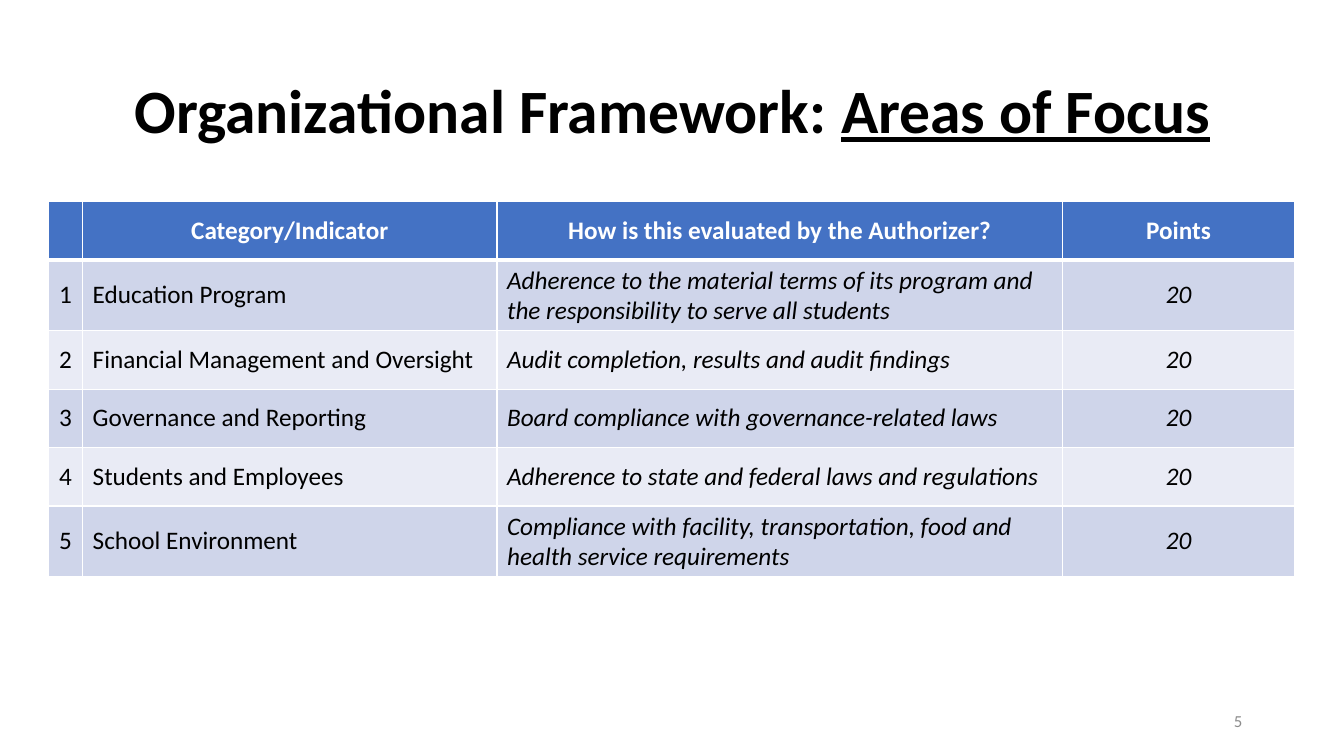
from lxml import etree
from pptx import Presentation
from pptx import util as u
from pptx.dml.color import RGBColor
from pptx.enum import text
from pptx.oxml.ns import qn

PX = 9144  # EMU per px, 100 px to the inch
BLACK = RGBColor(0x00, 0x00, 0x00)
WHITE = RGBColor(0xFF, 0xFF, 0xFF)
GREY = RGBColor(0x8C, 0x8C, 0x8C)
HEADER_BLUE = RGBColor(0x44, 0x72, 0xC4)
BANDS = RGBColor(0xCF, 0xD5, 0xEA), RGBColor(0xE9, 0xEB, 0xF5)
LEFT, CENTER, RIGHT = (text.PP_ALIGN.LEFT, text.PP_ALIGN.CENTER,
                       text.PP_ALIGN.RIGHT)

COLUMN_WIDTHS = 34, 411, 561, 230
COLUMN_ALIGNS = CENTER, LEFT, LEFT, CENTER
ROW_HEIGHT = 58
HEADINGS = ("", "Category/Indicator",
            "How is this evaluated by the Authorizer?", "Points")
AREAS = (
    ("Education Program", "Adherence to the material terms of its program "
     "and the responsibility to serve all students"),
    ("Financial Management and Oversight",
     "Audit completion, results and audit findings"),
    ("Governance and Reporting",
     "Board compliance with governance-related laws"),
    ("Students and Employees",
     "Adherence to state and federal laws and regulations"),
    ("School Environment", "Compliance with facility, transportation, food "
     "and health service requirements"),
)
POINTS = "20"


def add_span(para, words, size, color, **formats):
    span = para.add_run()
    span.text = words
    span.font.color.rgb = color
    for name, value in {"name": "Calibri", "size": u.Pt(size),
                        **formats}.items():
        setattr(span.font, name, value)


def add_line_of_text(page, box, align):
    """Add a wrapped, vertically centred text box; return its paragraph."""
    frame = page.shapes.add_textbox(*(side * PX for side in box)).text_frame
    frame.word_wrap = True
    frame.vertical_anchor = text.MSO_ANCHOR.MIDDLE
    para = frame.paragraphs[0]
    para.alignment = align
    return para


def add_title(page, box):
    para = add_line_of_text(page, box, CENTER)
    para.line_spacing = 0.9
    add_span(para, "Organizational Framework: ", 44, BLACK, bold=True)
    add_span(para, "Areas of Focus", 44, BLACK, bold=True, underline=True)


def add_page_number(page, box):
    add_span(add_line_of_text(page, box, RIGHT), "5", 12, GREY)


def add_borders(cell, widths):
    properties = cell._tc.get_or_add_tcPr()
    for side, width in widths.items():
        line = etree.SubElement(properties, qn("a:ln" + side),
                                w=str(u.Pt(width)))
        fill = etree.SubElement(line, qn("a:solidFill"))
        etree.SubElement(fill, qn("a:srgbClr"), val=str(WHITE))


def fill_cell(cell, words, align, fill, borders, color, **formats):
    add_borders(cell, borders)
    cell.fill.solid()
    cell.fill.fore_color.rgb = fill
    cell.vertical_anchor = text.MSO_ANCHOR.MIDDLE
    para = cell.text_frame.paragraphs[0]
    para.alignment = align
    if words:
        add_span(para, words, 18, color, **formats)


def add_areas_table(page, left, top):
    rows = [(str(number), *area, POINTS)
            for number, area in enumerate(AREAS, 1)]
    row_count = len(rows) + 1
    table = page.shapes.add_table(
        row_count, len(COLUMN_WIDTHS), left * PX, top * PX,
        sum(COLUMN_WIDTHS) * PX, row_count * ROW_HEIGHT * PX).table
    for column, width in zip(table.columns, COLUMN_WIDTHS):
        column.width = width * PX

    # Header row, with a heavy rule below it
    thin = {"L": 1, "R": 1, "T": 1, "B": 1}
    for column, heading in enumerate(HEADINGS):
        fill_cell(table.cell(0, column), heading, CENTER, HEADER_BLUE,
                  {**thin, "B": 3}, WHITE, bold=True)

    # Banded rows, with the last two columns in italics
    for row, values in enumerate(rows, 1):
        borders = {**thin, "T": 3} if row == 1 else thin
        for column, words in enumerate(values):
            fill_cell(table.cell(row, column), words, COLUMN_ALIGNS[column],
                      BANDS[(row - 1) % 2], borders, BLACK,
                      bold=False, italic=column >= 2)


def main():
    deck = Presentation()
    deck.slide_width, deck.slide_height = 1333 * PX, 750 * PX
    page = deck.slides.add_slide(deck.slide_layouts[6])
    add_title(page, (92, 40, 1150, 145))
    add_areas_table(page, 48, 200)
    add_page_number(page, (942, 695, 300, 40))
    deck.save("out.pptx")


if __name__ == "__main__":
    main()
